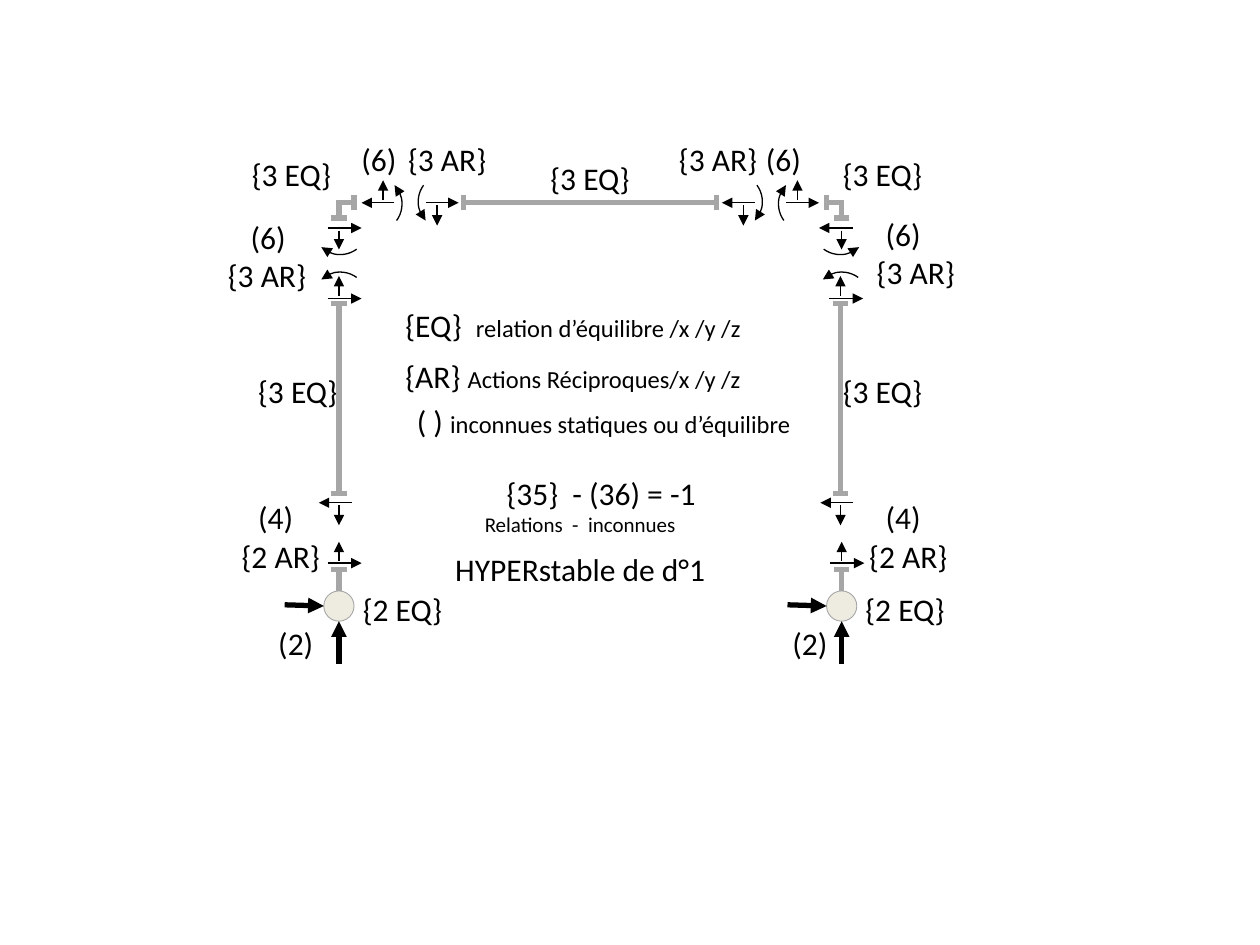
import pptx
import pptx.dml.color
import pptx.enum.shapes
import pptx.enum.text
import pptx.oxml
import pptx.oxml.ns
import pptx.util

Pt = pptx.util.Pt
SHAPES = pptx.enum.shapes.MSO_SHAPE
GREY, BLACK, CREAM = "A6A6A6", "000000", "EEECE1"

AXIS = 193.7            # x of the left column
BEAM_Y = 115.9
COLUMN_STEP = 286.6     # left column to right column
BASE_STEP = 287.3       # left support to right support
MIRROR = 674.6          # sum of the x values of two mirrored points
PLATE = 8.6             # length of the cut plates
MOMENT = 31.7           # size of the moment arcs
LABEL_HEIGHT = 28.8

FRAME_FORMAT = {
    "word_wrap": False,
    "auto_size": pptx.enum.text.MSO_AUTO_SIZE.SHAPE_TO_FIT_TEXT,
}


def rgb(hex_code):
    return pptx.dml.color.RGBColor.from_string(hex_code)


def set_line(part, colour, width, arrow=False):
    part.line.color.rgb = rgb(colour)
    part.line.width = Pt(width)
    if arrow:
        outline = part._element.spPr.find(pptx.oxml.ns.qn("a:ln"))
        head = pptx.oxml.parse_xml(
            f'<a:tailEnd {pptx.oxml.ns.nsdecls("a")} type="triangle"/>')
        outline.append(head)


def add_stroke(shapes, ends, colour=GREY, width=3, arrow=False):
    stroke = shapes.add_connector(
        pptx.enum.shapes.MSO_CONNECTOR.STRAIGHT, *map(Pt, ends))
    set_line(stroke, colour, width, arrow)
    stroke._element.spPr.append(pptx.oxml.parse_xml(
        f'<a:effectLst {pptx.oxml.ns.nsdecls("a")}/>'))
    return stroke


def add_force(shapes, ends, width=0.75):
    add_stroke(shapes, ends, BLACK, width, arrow=True)


def add_moment(shapes, left, top, flips, rotation=0):
    moment = shapes.add_shape(SHAPES.ARC, Pt(left), Pt(top), Pt(MOMENT), Pt(MOMENT))
    moment.shadow.inherit = False
    moment.adjustments[0], moment.adjustments[1] = 140.173, 187.816
    moment.rotation = rotation
    for axis in flips:
        moment._element.spPr.xfrm.set("flip" + axis, "1")
    moment.fill.background()
    set_line(moment, BLACK, 0.75, arrow=True)


def add_label(shapes, left, top, width, paragraphs, centred=False, height=LABEL_HEIGHT):
    """Each paragraph is a list of (text, size) runs."""
    label = shapes.add_textbox(Pt(left), Pt(top), Pt(width), Pt(height))
    frame = label.text_frame
    for attribute, value in FRAME_FORMAT.items():
        setattr(frame, attribute, value)
    for index, runs in enumerate(paragraphs):
        paragraph = frame.add_paragraph() if index else frame.paragraphs[0]
        if centred:
            paragraph.alignment = pptx.enum.text.PP_ALIGN.CENTER
        for text, size in runs:
            run = paragraph.add_run()
            run.text = text
            font_format = {"name": "Calibri", "size": Pt(size)}
            for attribute, value in font_format.items():
                setattr(run.font, attribute, value)
            run.font.color.rgb = rgb(BLACK)
    return label


def add_column(shapes, shift):
    x = AXIS + shift
    add_stroke(shapes, (x, 281.5, x, 174.2))
    for y in (282.2, 173.5):
        add_stroke(shapes, (x - PLATE / 2, y, x + PLATE / 2, y))
    # Forces at the foot, then at the head
    add_force(shapes, (x, 288.7, x, 300.2))
    add_force(shapes, (x + 7.2, 287.3, x - 11.5, 287.3))
    add_force(shapes, (x - 6.5, 170.6, x + 12.9, 170.6))
    add_force(shapes, (x, 169.2, x, 157.7))
    add_moment(shapes, x - 15.1, 155.5, "H")


def add_support(shapes, shift):
    x = AXIS + shift
    hinge = shapes.add_shape(SHAPES.OVAL, Pt(x - 8.65), Pt(337.7), Pt(17.3), Pt(17.3))
    hinge.shadow.inherit = False
    hinge.fill.solid()
    hinge.fill.fore_color.rgb = rgb(CREAM)
    set_line(hinge, GREY, 0.5)
    stub = add_stroke(shapes, (x, 337.7, x, 324.7))
    stub.begin_connect(hinge, 0)
    add_stroke(shapes, (x - PLATE / 2, 325.4, x + PLATE / 2, 325.4))
    # Ground reactions, then forces on the cut
    add_force(shapes, (x - 31, 345.6, x - 8.65, 346.3), 3)
    add_force(shapes, (x, 379.4, x, 355), 3)
    add_force(shapes, (x - 6.5, 321.8, x + 12.9, 321.8))
    add_force(shapes, (x, 320.4, x, 309.6))


def add_corner(shapes, mirrored):
    def place(ends):
        x1, y1, x2, y2 = ends
        return (MIRROR - x1, y1, MIRROR - x2, y2) if mirrored else ends

    members = [
        (AXIS, 123.1, AXIS, 114.5), (192.2, BEAM_Y, 200.9, BEAM_Y),
        (AXIS - PLATE / 2, 124.6, AXIS + PLATE / 2, 124.6),
    ] + [(x, BEAM_Y + PLATE / 2, x, BEAM_Y - PLATE / 2) for x in (202.3, 265)]
    forces = [
        (187.2, 130.3, 206.6, 130.3), (AXIS, 131.8, AXIS, 142.6),
        (225.4, BEAM_Y, 206.6, BEAM_Y), (218.9, 114.5, 218.9, 103),
        (243.4, BEAM_Y, 262.1, BEAM_Y), (249.8, 117.4, 249.8, 128.9),
    ]
    moments = [(178.6, 113.8, "HV", 0), (198, 100.8, "V", 270), (239, 99.4, "H", 270)]
    for ends in members:
        add_stroke(shapes, place(ends))
    for ends in forces:
        add_force(shapes, place(ends))
    for left, top, flips, rotation in moments:
        if mirrored:
            left = MIRROR - left - MOMENT
            flips = "".join(sorted(set(flips) ^ {"H"}))
            rotation = (360 - rotation) % 360
        add_moment(shapes, left, top, flips, rotation)


def add_counts(shapes):
    widths = {"(": 34.6, "{": 60}
    places = {
        "(6)": [(136.1, 121), (199.4, 76.3), (430.6, 76.3), (499, 119.5)],
        "{3 AR}": [(123.1, 142.6), (226.1, 76.3), (380.9, 76.3), (493.9, 141.1)],
        "{3 EQ}": [(136.8, 85), (474.5, 85), (474.5, 208.8), (140.4, 208.8), (307.4, 87.1)],
        "(4)": [(499, 280.8), (140.4, 280.8)],
        "{2 AR}": [(489.6, 303.1), (131, 303.1)],
        "(2)": [(151.9, 352.8), (445.7, 352.8)],
        "{2 EQ}": [(200.2, 333.4), (487.4, 333.4)],
    }
    for text, corners in places.items():
        for left, top in corners:
            add_label(shapes, left, top, widths[text[0]], [[(text, 18)]])


def add_legend(shapes):
    entries = [
        (224.6, 171.4, 208, "{EQ}  ", "relation d’équilibre /x /y /z"),
        (224.6, 200.2, 208, "{AR} ", "Actions Réciproques/x /y /z"),
        (231.1, 226.1, 230.4, "( ) ", "inconnues statiques ou d’équilibre"),
    ]
    for left, top, width, symbol, meaning in entries:
        add_label(shapes, left, top, width, [[(symbol, 18), (meaning, 14)]])


def add_result(shapes):
    balance = add_label(
        shapes, 254.9, 267.1, 153.4,
        [[("{35}  - (36) = -1", 18)], [("Relations  -  inconnues", 12)]],
        centred=True, height=43.9)
    # Indent that moves the sum to the right of the centre
    sum_line = balance.text_frame.paragraphs[0]
    sum_line._p.get_or_add_pPr().set("marL", str(Pt(24)))
    add_label(shapes, 251.3, 311, 160.6, [[("HYPERstable de d°1", 18)]], centred=True)


def main():
    deck = pptx.Presentation()
    deck.slide_width, deck.slide_height = Pt(720), Pt(540)
    slide = deck.slides.add_slide(deck.slide_layouts[6])
    shapes = slide.shapes.add_group_shape().shapes

    # Portal frame, cut into members
    add_stroke(shapes, (266.4, BEAM_Y, 409.7, BEAM_Y))
    for side in (0, 1):
        add_support(shapes, side * BASE_STEP)
        add_column(shapes, side * COLUMN_STEP)
        add_corner(shapes, mirrored=bool(side))

    # Counts, legend and result
    add_counts(shapes)
    add_legend(shapes)
    add_result(shapes)
    deck.save("out.pptx")


if __name__ == "__main__":
    main()
